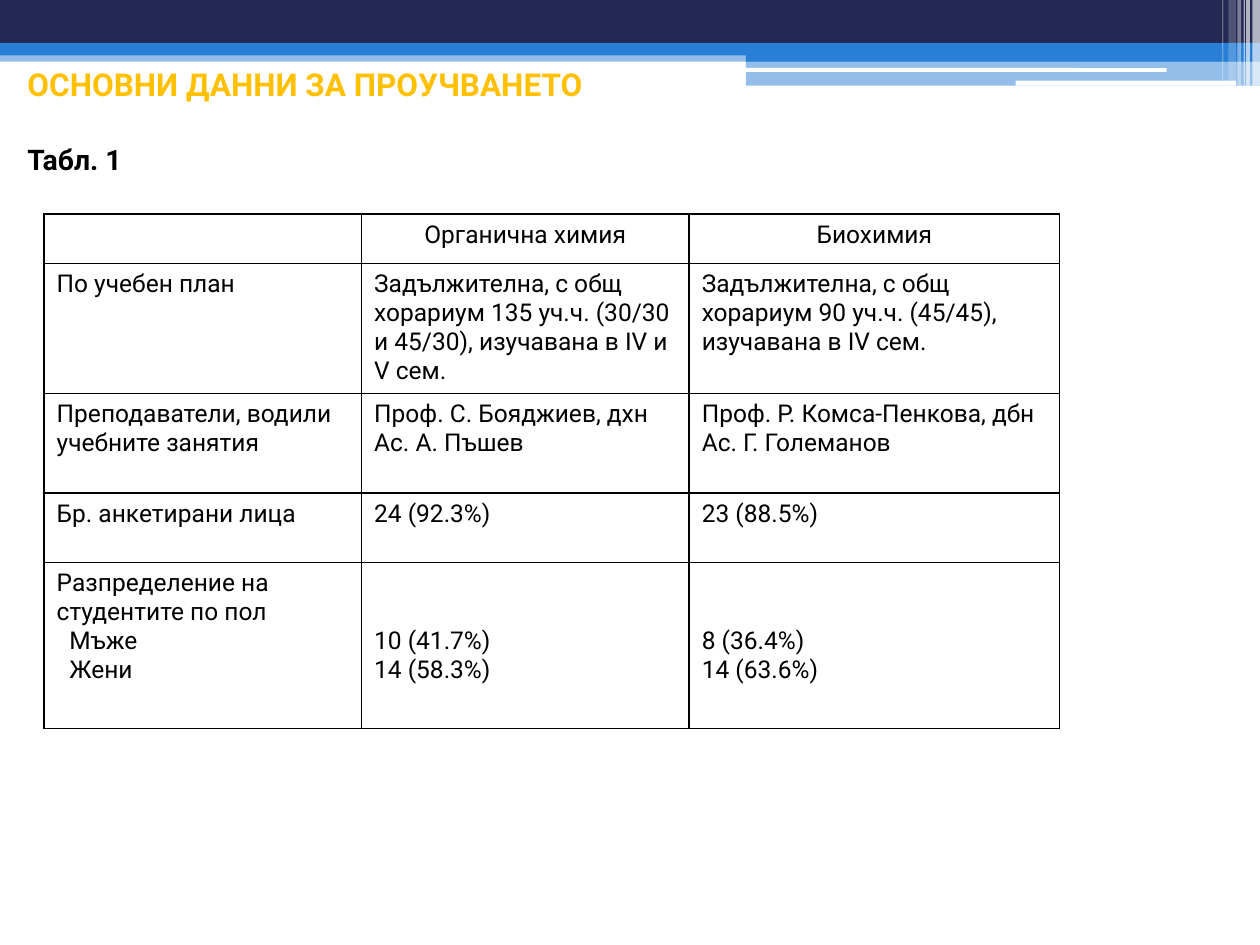
from typing import NamedTuple

from lxml.etree import SubElement
from pptx import Presentation
from pptx.dml.color import RGBColor
from pptx.enum.shapes import MSO_SHAPE as Kind
from pptx.enum.text import PP_ALIGN as Align
from pptx.oxml.ns import qn
from pptx.util import Inches, Pt

FONT = "Roboto"
NAVY, BLUE, WHITE, GOLD, BLACK = "242852", "297FD5", "FFFFFF", "FFC000", "000000"


class Bar(NamedTuple):
    left: float
    top: float
    width: float
    height: float
    color: str
    alpha: int = 100
    kind: Kind = Kind.RECTANGLE


class Cell(NamedTuple):
    lines: tuple = ()
    align: Align = Align.LEFT
    top: float = 0.05
    inset: float = 0  # indent of the lines after the first


BARS = [
    Bar(0, 0.4, 10, 0.09, BLUE, 50),
    Bar(0, 0, 10, 0.34, NAVY),
    Bar(0, 0.34, 10, 0.1, BLUE),
    Bar(5.92, 0.39, 4.08, 0.1, BLUE),
    Bar(5.92, 0.48, 4.08, 0.2, BLUE, 50),
    Bar(5.91, 0.54, 3.35, 0.03, WHITE, kind=Kind.ROUNDED_RECTANGLE),
    Bar(8.06, 0.64, 1.75, 0.04, WHITE, kind=Kind.ROUNDED_RECTANGLE),
    Bar(9.94, 0, 0.06, 0.68, WHITE, 65),
    Bar(9.89, 0, 0.03, 0.68, WHITE, 65),
    Bar(9.87, 0, 0.01, 0.68, WHITE, 60),
    Bar(9.82, 0, 0.03, 0.68, WHITE, 40),
    Bar(9.75, 0, 0.06, 0.64, WHITE, 20),
    Bar(9.7, 0, 0.01, 0.64, WHITE, 30),
]

LOW = 0.51  # top margin that lines counts up with the gender labels
COLS = [2.52, 2.6, 2.94]
ROWS = [0.39, 1.02, 0.79, 0.55, 1.32]
CELLS = [
    [Cell(), Cell(("Органична химия",), Align.CENTER), Cell(("Биохимия",), Align.CENTER)],
    [
        Cell(("По учебен план",)),
        Cell(("Задължителна, с общ хорариум 135 уч.ч. (30/30 и 45/30), изучавана в IV и V сем.",)),
        Cell(("Задължителна, с общ хорариум 90 уч.ч. (45/45), изучавана в IV сем.",)),
    ],
    [
        Cell(("Преподаватели, водили учебните занятия",)),
        Cell(("Проф. С. Бояджиев, дхн", "Ас. А. Пъшев")),
        Cell(("Проф. Р. Комса-Пенкова, дбн", "Ас. Г. Големанов")),
    ],
    [Cell(("Бр. анкетирани лица",)), Cell(("24 (92.3%)",)), Cell(("23 (88.5%)",))],
    [
        Cell(("Разпределение на студентите по пол", "Мъже", "Жени"), inset=0.1),
        Cell(("10 (41.7%)", "14 (58.3%)"), top=LOW),
        Cell(("8 (36.4%)", "14 (63.6%)"), top=LOW),
    ],
]


def paint(target, color: str) -> None:
    target.rgb = RGBColor.from_string(color)


def style(para, size: float, color: str, bold: bool = False) -> None:
    font = para.font
    font.name, font.size, font.bold = FONT, Pt(size), bold
    paint(font.color, color)


def draw_bar(slide, bar: Bar) -> None:
    box = [Inches(n) for n in bar[:4]]
    shape = slide.shapes.add_shape(bar.kind, *box)
    shape.shadow.inherit = False
    shape.line.fill.background()
    shape.fill.solid()
    paint(shape.fill.fore_color, bar.color)
    if bar.alpha < 100:
        clr = shape.fill._xPr.find(".//" + qn("a:srgbClr"))
        SubElement(clr, qn("a:alpha"), val=str(bar.alpha * 1000))


def draw_title(slide) -> None:
    box = slide.shapes.add_textbox(Inches(0.12), Inches(0.52), Inches(9.53), Inches(0.9))
    frame = box.text_frame
    frame.word_wrap = True
    frame.margin_top = frame.margin_bottom = 0
    head = frame.paragraphs[0]
    head.text = "ОСНОВНИ ДАННИ ЗА ПРОУЧВАНЕТО"
    style(head, 18, GOLD, True)
    label = frame.add_paragraph()
    label.text = "Табл. 1"
    label.space_before = Pt(22)
    style(label, 16.2, BLACK, True)


def add_edges(cell) -> None:
    """Put a thin black line on all four sides of the cell."""
    props = cell._tc.get_or_add_tcPr()
    for side in "LRTB":
        line = SubElement(props, qn(f"a:ln{side}"), w=str(Pt(1)))
        fill = SubElement(line, qn("a:solidFill"))
        SubElement(fill, qn("a:srgbClr"), val=BLACK)


def fill_cell(cell, data: Cell) -> None:
    add_edges(cell)
    cell.fill.background()
    cell.margin_top = Inches(data.top)
    frame = cell.text_frame
    frame.text = "\n".join(data.lines)
    for i, para in enumerate(frame.paragraphs):
        para.alignment = data.align
        if i and data.inset:
            para._p.get_or_add_pPr().set("marL", str(Inches(data.inset)))
        style(para, 14, BLACK)


def draw_table(slide) -> None:
    frame = slide.shapes.add_table(
        len(ROWS), len(COLS), Inches(0.35), Inches(1.7), Inches(sum(COLS)), Inches(sum(ROWS))
    )
    table = frame.table
    table.first_row = table.horz_banding = False
    for col, width in zip(table.columns, COLS):
        col.width = Inches(width)
    for row, height, line in zip(table.rows, ROWS, CELLS):
        row.height = Inches(height)
        for cell, data in zip(row.cells, line):
            fill_cell(cell, data)


def main() -> None:
    deck = Presentation()
    deck.slide_width, deck.slide_height = Inches(10), Inches(7.5)
    slide = deck.slides.add_slide(deck.slide_layouts[6])
    for bar in BARS:
        draw_bar(slide, bar)
    draw_title(slide)
    draw_table(slide)
    deck.save("out.pptx")


if __name__ == "__main__":
    main()
